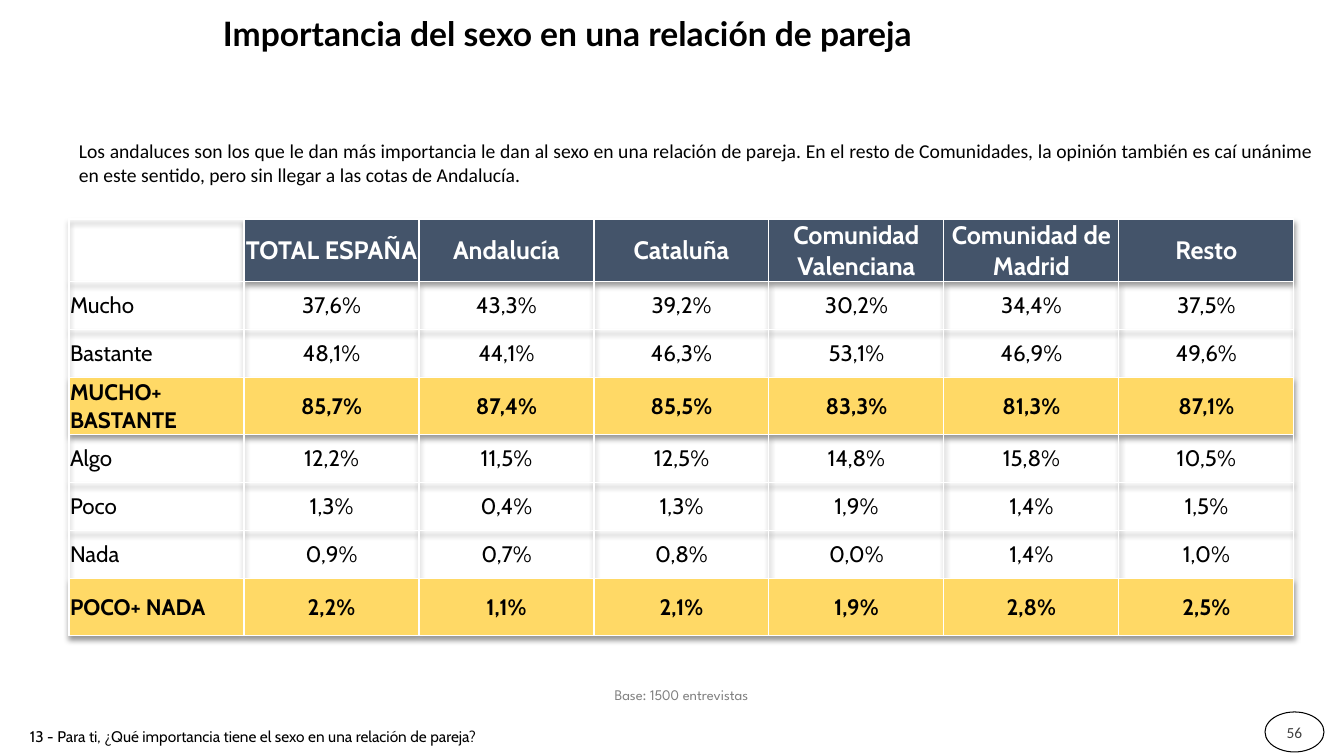
from dataclasses import dataclass

from lxml import etree
from pptx import Presentation
from pptx import util as u
from pptx.dml.color import RGBColor
from pptx.enum import shapes, text
from pptx.oxml import ns

BLACK = RGBColor(0x00, 0x00, 0x00)
WHITE = RGBColor(0xFF, 0xFF, 0xFF)
NAVY = RGBColor(0x44, 0x54, 0x6A)
GOLD = RGBColor(0xFF, 0xD9, 0x66)
GRAY = RGBColor(0x80, 0x80, 0x80)
CHARCOAL = RGBColor(0x40, 0x40, 0x40)

LEFT = text.PP_ALIGN.LEFT
CENTER = text.PP_ALIGN.CENTER
JUSTIFY = text.PP_ALIGN.JUSTIFY
MIDDLE = text.MSO_ANCHOR.MIDDLE
TOP = text.MSO_ANCHOR.TOP


@dataclass(frozen=True)
class Style:
    font: str
    size: float
    color: RGBColor
    bold: bool = False


@dataclass(frozen=True)
class Label:
    words: str
    left: int
    top: int
    width: int
    height: int
    align: text.PP_ALIGN
    style: Style
    anchor: text.MSO_ANCHOR = TOP
    grows: bool = True


@dataclass(frozen=True)
class Row:
    name: str
    values: str
    height: int = 48
    total: bool = False


LABELS = [
    Label("Base: 1500 entrevistas", 573, 681, 217, 28, CENTER, Style("League Spartan", 10.5, GRAY)),
    Label(
        "Los andaluces son los que le dan más importancia le dan al sexo en una relación de pareja. "
        "En el resto de Comunidades, la opinión también es caí unánime en este sentido, "
        "pero sin llegar a las cotas de Andalucía.",
        69, 134, 1255, 57, JUSTIFY, Style("Calibri", 14, BLACK),
    ),
    Label(
        "Importancia del sexo en una relación de pareja",
        151, 3, 833, 61, CENTER, Style("Lato", 24, BLACK, True), MIDDLE, False,
    ),
    Label(
        "13 - Para ti, ¿Qué importancia tiene el sexo en una relación de pareja?",
        20, 722, 738, 29, LEFT, Style("Cabin", 11, BLACK),
    ),
]

REGIONS = [
    "TOTAL ESPAÑA", "Andalucía", "Cataluña",
    "Comunidad Valenciana", "Comunidad de Madrid", "Resto",
]
ROWS = [
    Row("Mucho", "37,6% 43,3% 39,2% 30,2% 34,4% 37,5%"),
    Row("Bastante", "48,1% 44,1% 46,3% 53,1% 46,9% 49,6%"),
    Row("MUCHO+ BASTANTE", "85,7% 87,4% 85,5% 83,3% 81,3% 87,1%", 57, True),
    Row("Algo", "12,2% 11,5% 12,5% 14,8% 15,8% 10,5%"),
    Row("Poco", "1,3% 0,4% 1,3% 1,9% 1,4% 1,5%"),
    Row("Nada", "0,9% 0,7% 0,8% 0,0% 1,4% 1,0%"),
    Row("POCO+ NADA", "2,2% 1,1% 2,1% 1,9% 2,8% 2,5%", 57, True),
]
HEADER_HEIGHT = 54
COLUMN_WIDTH = 175


def px(count: int) -> u.Emu:
    return u.Emu(round(count * 914400 / 100.8))


def write(frame, words: str, align: text.PP_ALIGN, style: Style) -> None:
    para = frame.paragraphs[0]
    para.alignment = align
    span = para.add_run()
    span.text = words
    span.font.name = style.font
    span.font.size = u.Pt(style.size)
    span.font.bold = style.bold
    span.font.color.rgb = style.color


def add_label(page, label: Label) -> None:
    box = page.shapes.add_textbox(px(label.left), px(label.top), px(label.width), px(label.height))
    frame = box.text_frame
    frame.word_wrap = True
    frame.vertical_anchor = label.anchor
    frame.auto_size = text.MSO_AUTO_SIZE.SHAPE_TO_FIT_TEXT if label.grows else text.MSO_AUTO_SIZE.NONE
    write(frame, label.words, label.align, label.style)


def add_page_number(page) -> None:
    badge = page.shapes.add_shape(shapes.MSO_SHAPE.OVAL, px(1265), px(712), px(59), px(40))
    badge.shadow.inherit = False
    badge.fill.solid()
    badge.fill.fore_color.rgb = WHITE
    color = badge.fill._xPr.find(".//" + ns.qn("a:srgbClr"))
    etree.SubElement(color, ns.qn("a:alpha"), val="70000")
    badge.line.color.rgb = BLACK
    badge.line.width = u.Pt(0.75)
    frame = badge.text_frame
    frame.margin_left = frame.margin_right = px(2)
    frame.margin_top = frame.margin_bottom = px(5)
    frame.vertical_anchor = MIDDLE
    write(frame, "56", CENTER, Style("Calibri", 11, CHARCOAL))


def add_borders(cell) -> None:
    properties = cell._tc.get_or_add_tcPr()
    for index, side in enumerate(("lnL", "lnR", "lnT", "lnB")):
        line = etree.Element(ns.qn(f"a:{side}"), w=str(u.Pt(1)))
        fill = etree.SubElement(line, ns.qn("a:solidFill"))
        etree.SubElement(fill, ns.qn("a:srgbClr"), val=str(WHITE))
        properties.insert(index, line)


def add_table_shadow(table) -> None:
    effects = etree.Element(ns.qn("a:effectLst"))
    shadow = etree.SubElement(
        effects, ns.qn("a:outerShdw"), blurRad="50800", dist="38100", dir="5400000", algn="t", rotWithShape="0"
    )
    color = etree.SubElement(shadow, ns.qn("a:srgbClr"), val=str(BLACK))
    etree.SubElement(color, ns.qn("a:alpha"), val="40000")
    table._tbl.tblPr.insert(0, effects)


def fill_cell(cell, words: str, align: text.PP_ALIGN, style: Style, fill: RGBColor | None) -> None:
    cell.margin_left = cell.margin_right = cell.margin_top = px(1)
    cell.margin_bottom = 0
    cell.vertical_anchor = MIDDLE
    if fill is None:
        cell.fill.background()
    else:
        cell.fill.solid()
        cell.fill.fore_color.rgb = fill
    add_borders(cell)
    if words:
        write(cell.text_frame, words, align, style)


def add_results(page) -> None:
    heights = [HEADER_HEIGHT] + [row.height for row in ROWS]
    columns = len(REGIONS) + 1
    table = page.shapes.add_table(
        len(heights), columns, px(69), px(219), px(COLUMN_WIDTH * columns), px(sum(heights))
    ).table
    table.first_row = table.horz_banding = False
    add_table_shadow(table)
    for column in table.columns:
        column.width = px(COLUMN_WIDTH)
    for line, height in zip(table.rows, heights):
        line.height = px(height)
    header = Style("Cabin", 18, WHITE, True)
    for index, region in enumerate(["", *REGIONS]):
        fill_cell(table.cell(0, index), region, CENTER, header, NAVY if region else None)
    for number, row in enumerate(ROWS, 1):
        style = Style("Cabin", 16, BLACK, row.total)
        for index, words in enumerate([row.name, *row.values.split()]):
            align = CENTER if index else LEFT
            fill_cell(table.cell(number, index), words, align, style, GOLD if row.total else None)


def main() -> None:
    deck = Presentation()
    deck.slide_width, deck.slide_height = px(1344), px(756)
    page = deck.slides.add_slide(deck.slide_layouts[6])
    add_page_number(page)
    add_results(page)
    for label in LABELS:
        add_label(page, label)
    deck.save("out.pptx")


if __name__ == "__main__":
    main()
